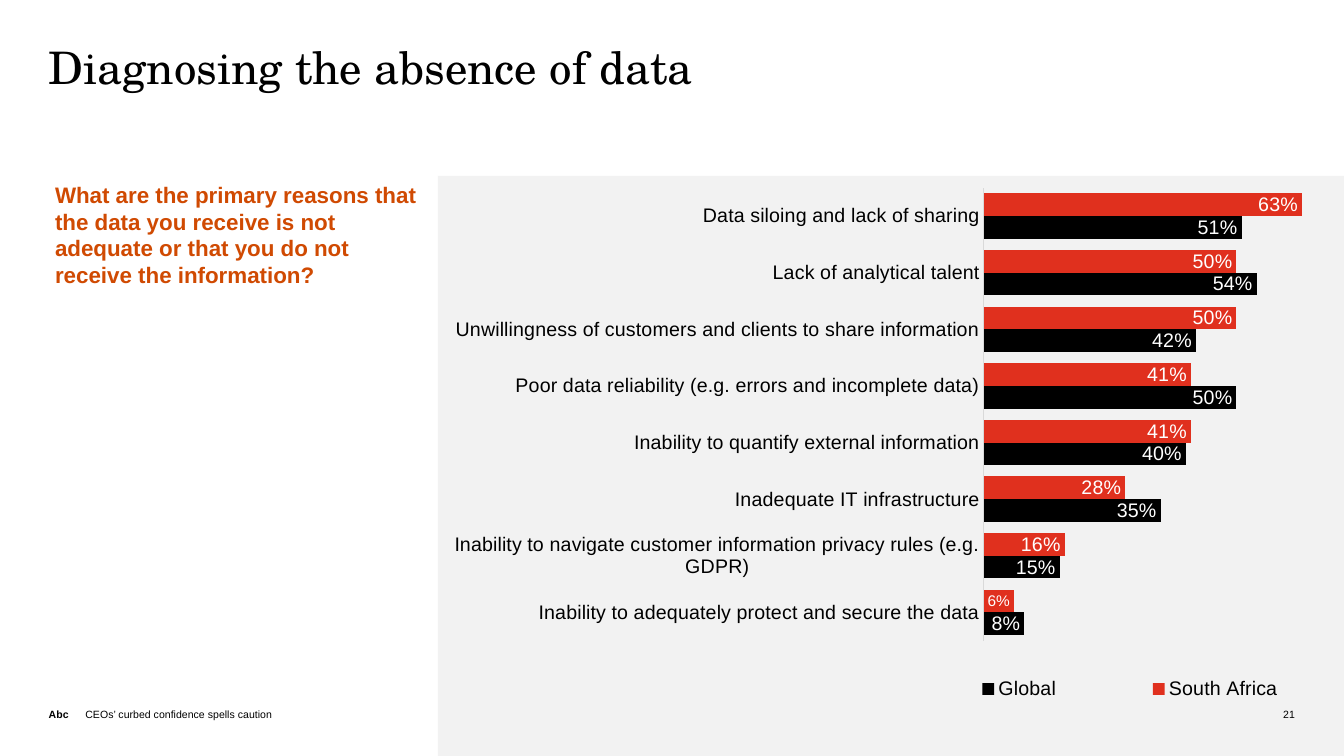
from pptx import Presentation
from pptx.chart.data import CategoryChartData
from pptx.dml.color import RGBColor
from pptx.enum import chart as ch, shapes, text
from pptx.oxml import parse_xml
from pptx.oxml.ns import nsdecls
from pptx.util import Pt

COLORS = {"black": "000000", "white": "FFFFFF", "panel": "F2F2F2",
          "orange": "D04A02", "red": "E0301E", "axis": "D9D9D9"}
SANS, SERIF = "Arial", "TeX Gyre Schola"
LEFT, TOP, SPLIT = 34.8, 125.6, 312.8
FOOT, WIDTH, HEIGHT = 504, 960, 540
SMALL = 0.07

REASONS = [
    ("Data siloing and lack of sharing", 0.63, 0.51),
    ("Lack of analytical talent", 0.5, 0.54),
    ("Unwillingness of customers and clients to share information", 0.5, 0.42),
    ("Poor data reliability (e.g. errors and incomplete data)", 0.41, 0.5),
    ("Inability to quantify external information", 0.41, 0.4),
    ("Inadequate IT infrastructure", 0.28, 0.35),
    ("Inability to navigate customer information privacy rules (e.g. GDPR)", 0.16, 0.15),
    ("Inability to adequately protect and secure the data", 0.06, 0.08),
]


def color(name):
    return RGBColor.from_string(COLORS[name])


def style(font, size, tint="black", face=SANS, bold=False):
    font.size, font.name, font.bold = Pt(size), face, bold
    font.color.rgb = color(tint)


def add_text(slide, box, words, size, tint="black", face=SANS, bold=False,
             inset=(0, 0), anchor=text.MSO_ANCHOR.TOP,
             align=text.PP_ALIGN.LEFT, spacing=1.0):
    frame = slide.shapes.add_textbox(*map(Pt, box)).text_frame
    frame.word_wrap = True
    frame.vertical_anchor = anchor
    frame.margin_left = frame.margin_right = Pt(inset[0])
    frame.margin_top = frame.margin_bottom = Pt(inset[1])
    para = frame.paragraphs[0]
    para.alignment, para.line_spacing = align, spacing
    run = para.add_run()
    run.text = words
    style(run.font, size, tint, face, bold)


def add_panel(slide):
    panel = slide.shapes.add_shape(
        shapes.MSO_SHAPE.RECTANGLE, Pt(SPLIT), Pt(TOP),
        Pt(WIDTH - SPLIT), Pt(HEIGHT - TOP))
    panel.shadow.inherit = False
    panel.fill.solid()
    panel.fill.fore_color.rgb = color("panel")
    panel.line.fill.background()


def layout(box, inner=False):
    target = '<c:layoutTarget val="inner"/>' if inner else ""
    modes = "".join(f'<c:{k}Mode val="edge"/>' for k in "xy")
    sizes = "".join(f'<c:{k} val="{v}"/>' for k, v in zip("xywh", box))
    return parse_xml(f'<c:layout {nsdecls("c")}><c:manualLayout>{target}{modes}'
                     f'{sizes}</c:manualLayout></c:layout>')


def place(parent, node, index):
    for old in parent.findall(node.tag):
        parent.remove(old)
    parent.insert(index, node)


def label_bars(series):
    labels = series.data_labels
    labels.show_value = True
    labels.position = ch.XL_LABEL_POSITION.INSIDE_END
    labels.number_format, labels.number_format_is_linked = "0%", False
    style(labels.font, 14, "white")
    for index, value in enumerate(series.values):
        if value < SMALL:
            label = series.points[index].data_label
            label.position = ch.XL_LABEL_POSITION.INSIDE_END
            style(label.font, 11, "white")


def add_bars(slide):
    names, south, world = zip(*REASONS)
    data = CategoryChartData(number_format="0%")
    data.categories = names
    data.add_series("South Africa", south)
    data.add_series("Global", world)
    chart = slide.shapes.add_chart(
        ch.XL_CHART_TYPE.BAR_CLUSTERED, Pt(SPLIT), Pt(TOP),
        Pt(772.5), Pt(404.6), data).chart
    style(chart.font, 14)
    chart.has_title = False

    plot = chart.plots[0]
    plot.gap_width, plot.overlap = 50, 0
    plot.vary_by_categories = False
    for series, tint in zip(plot.series, ("red", "black")):
        series.format.fill.solid()
        series.format.fill.fore_color.rgb = color(tint)
        label_bars(series)

    cats = chart.category_axis
    cats.reverse_order = True
    cats.major_tick_mark = ch.XL_TICK_MARK.NONE
    cats.format.line.color.rgb = color("axis")
    cats.format.line.width = Pt(0.75)
    style(cats.tick_labels.font, 14)
    scale = chart.value_axis
    scale.minimum_scale, scale.maximum_scale = 0, 1
    scale.has_major_gridlines = False
    scale.visible = False

    chart.has_legend = True
    legend = chart.legend
    legend.position = ch.XL_LEGEND_POSITION.BOTTOM
    legend.include_in_layout = False
    style(legend.font, 14)
    place(legend._element, layout((0.42, 0.866, 0.44, 0.08)), 1)
    place(chart._chartSpace.chart.plotArea,
          layout((0.505, 0.021, 0.467, 0.8), inner=True), 0)


def main():
    deck = Presentation()
    deck.slide_width, deck.slide_height = Pt(WIDTH), Pt(HEIGHT)
    slide = deck.slides.add_slide(deck.slide_layouts[6])
    low, right = text.MSO_ANCHOR.BOTTOM, text.PP_ALIGN.RIGHT
    add_text(slide, (LEFT, FOOT, 24, 11), "Abc", 7.5, bold=True, anchor=low)
    add_text(slide, (61, FOOT, 405, 11),
             "CEOs’ curbed confidence spells caution", 7.5, anchor=low)
    add_panel(slide)
    add_text(slide, (LEFT, 34, 890, 109), "Diagnosing the absence of data",
             32, face=SERIF, spacing=0.85)
    add_text(slide, (892, FOOT, 33, 11), "21", 7.5, anchor=low, align=right)
    add_text(slide, (32.2, TOP, 281, 104),
             "What are the primary reasons that the data you receive is not "
             "adequate or that you do not receive the information?",
             16, "orange", bold=True, inset=(7.2, 3.6))
    add_bars(slide)
    deck.save("out.pptx")


if __name__ == "__main__":
    main()
